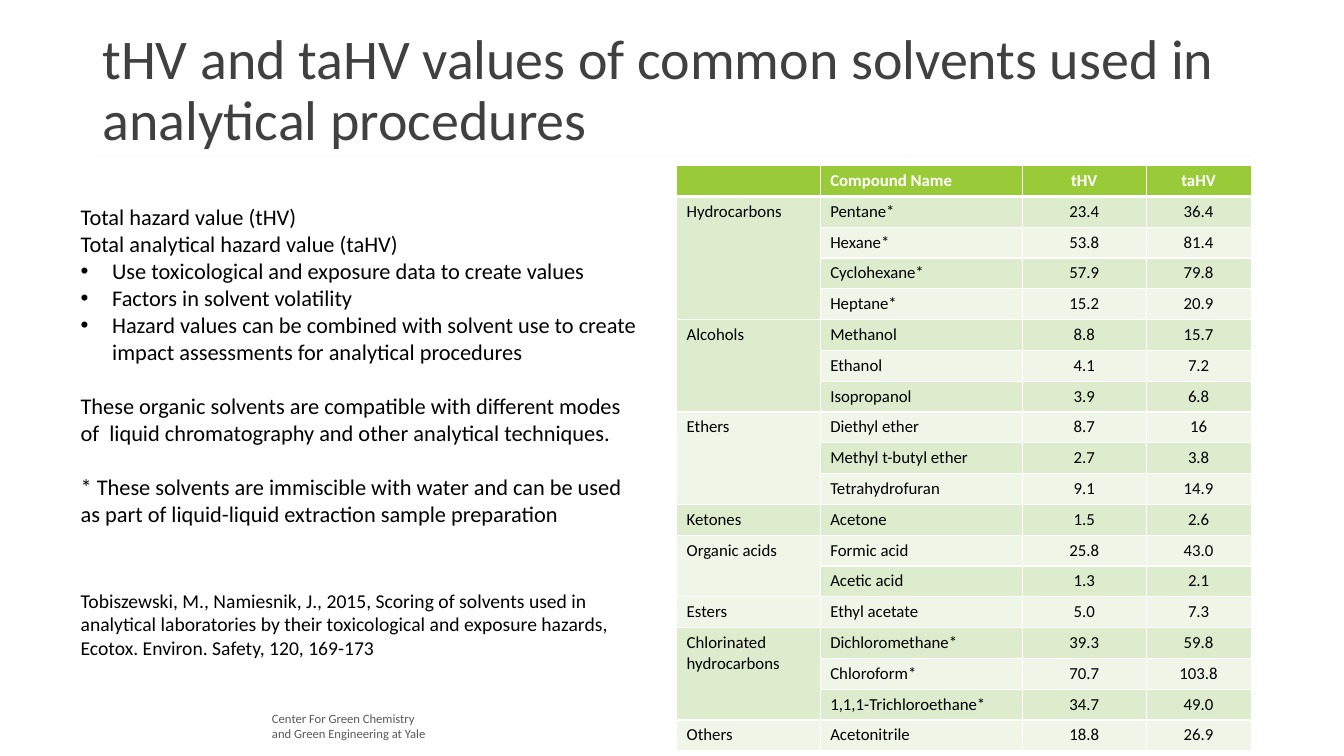
from lxml.etree import SubElement
from pptx import Presentation
from pptx.dml.color import RGBColor
from pptx.enum.shapes import MSO_CONNECTOR
from pptx.enum.text import MSO_ANCHOR, MSO_AUTO_SIZE, PP_ALIGN
from pptx.oxml.ns import qn
from pptx.util import Pt

COLORS = {
    "title": "404040", "text": "000000", "footer": "595959", "white": "FFFFFF",
    "header": "99CB38", "band": "DEECCE", "light": "EFF6E8",
    "blue": "4EB3CF", "teal": "44C1A3", "green": "37A76F",
}
TITLE = "tHV and taHV values of common solvents used in analytical procedures"
FOOTER = ["Center For Green Chemistry", "and Green Engineering at Yale"]
RULES = [("blue", 66, 703.5, 101.5), ("teal", 65, 843, 106.5), ("green", 65.5, 894, 111.5)]
BODY = [
    ("Total hazard value (tHV)", 16, 0, False),
    ("Total analytical hazard value (taHV)", 16, 0, False),
    ("Use toxicological and exposure data to create values", 16, 0, True),
    ("Factors in solvent volatility", 16, 0, True),
    ("Hazard values can be combined with solvent use to create impact assessments "
     "for analytical procedures", 16, 0, True),
    ("These organic solvents are compatible with different modes of  liquid "
     "chromatography and other analytical techniques.", 16, 19.5, False),
    ("* These solvents are immiscible with water and can be used as part of "
     "liquid-liquid extraction sample preparation", 16, 19.5, False),
    ("Tobiszewski, M., Namiesnik, J., 2015, Scoring of solvents used in analytical "
     "laboratories by their toxicological and exposure hazards, Ecotox. Environ. "
     "Safety, 120, 169-173", 14, 44, False),
]
HEADER = ["", "Compound Name", "tHV", "taHV"]
SOLVENTS = {
    "Hydrocarbons": [("Pentane*", "23.4", "36.4"), ("Hexane*", "53.8", "81.4"),
                     ("Cyclohexane*", "57.9", "79.8"), ("Heptane*", "15.2", "20.9")],
    "Alcohols": [("Methanol", "8.8", "15.7"), ("Ethanol", "4.1", "7.2"),
                 ("Isopropanol", "3.9", "6.8")],
    "Ethers": [("Diethyl ether", "8.7", "16"), ("Methyl t-butyl ether", "2.7", "3.8"),
               ("Tetrahydrofuran", "9.1", "14.9")],
    "Ketones": [("Acetone", "1.5", "2.6")],
    "Organic acids": [("Formic acid", "25.8", "43.0"), ("Acetic acid", "1.3", "2.1")],
    "Esters": [("Ethyl acetate", "5.0", "7.3")],
    "Chlorinated hydrocarbons": [("Dichloromethane*", "39.3", "59.8"),
                                 ("Chloroform*", "70.7", "103.8"),
                                 ("1,1,1-Trichloroethane*", "34.7", "49.0")],
    "Others": [("Acetonitrile", "18.8", "26.9")],
}
COLUMN_WIDTHS = [102.6, 144.3, 88.5, 75]
ROW_HEIGHT = 22


class SlideBuilder:
    """Holds the style and the current slide, and adds each kind of element."""

    def __init__(self, slide, font_name="Calibri"):
        self.slide = slide
        self.font_name = font_name

    def style(self, paragraph, size, color, bold=False):
        font = paragraph.font
        font.name, font.size, font.bold = self.font_name, Pt(size), bold
        font.color.rgb = RGBColor.from_string(COLORS[color])

    def place(self, shape, left, top, width, height):
        shape.left, shape.top = Pt(left), Pt(top)
        shape.width, shape.height = Pt(width), Pt(height)
        shape.text_frame.word_wrap = True
        shape.text_frame.auto_size = MSO_AUTO_SIZE.NONE

    def title(self, text, *box):
        shape = self.slide.shapes.title
        self.place(shape, *box)
        shape.text_frame.text = text
        shape.text_frame.vertical_anchor = MSO_ANCHOR.MIDDLE
        paragraph = shape.text_frame.paragraphs[0]
        paragraph.alignment, paragraph.line_spacing = PP_ALIGN.LEFT, 0.9
        self.style(paragraph, 40, "title")

    def body(self, items, *box):
        shape = self.slide.placeholders[1]
        self.place(shape, *box)
        shape.text_frame.text = "\n".join(item[0] for item in items)
        for paragraph, (_, size, gap, bulleted) in zip(shape.text_frame.paragraphs, items):
            paragraph.space_before, paragraph.line_spacing = Pt(gap), 1.0
            properties = paragraph._p.get_or_add_pPr()
            indent = Pt(22.5) if bulleted else 0
            properties.set("marL", str(indent))
            properties.set("indent", str(-indent))
            if bulleted:
                SubElement(properties, qn("a:buFont"), typeface="Arial")
                SubElement(properties, qn("a:buChar"), char="•")
            else:
                SubElement(properties, qn("a:buNone"))
            self.style(paragraph, size, "text")

    def text(self, lines, size, color, *box):
        shape = self.slide.shapes.add_textbox(*map(Pt, box))
        shape.text_frame.word_wrap = True
        shape.text_frame.text = "\n".join(lines)
        for paragraph in shape.text_frame.paragraphs:
            self.style(paragraph, size, color)

    def faint_rule(self, color, left, right, top):
        rule = self.slide.shapes.add_connector(
            MSO_CONNECTOR.STRAIGHT, Pt(left), Pt(top), Pt(right), Pt(top))
        rule.line.width = Pt(0.5)
        rule.line.color.rgb = RGBColor.from_string(COLORS[color])
        tint = rule.line._ln.find(".//" + qn("a:srgbClr"))
        SubElement(tint, qn("a:alpha"), val="4000")
        SubElement(rule._element.spPr, qn("a:effectLst"))

    def cell(self, cell, text, fill, color, centered, is_header):
        properties = cell._tc.get_or_add_tcPr()
        for side in "LRTB":
            width = Pt(3 if is_header and side == "B" else 1)
            border = SubElement(properties, qn(f"a:ln{side}"), w=str(width))
            solid = SubElement(border, qn("a:solidFill"))
            SubElement(solid, qn("a:srgbClr"), val=COLORS["white"])
        cell.fill.solid()
        cell.fill.fore_color.rgb = RGBColor.from_string(COLORS[fill])
        cell.text = text
        paragraph = cell.text_frame.paragraphs[0]
        paragraph.alignment = PP_ALIGN.CENTER if centered else PP_ALIGN.LEFT
        self.style(paragraph, 12, color, bold=is_header)

    def table(self, header, groups, left, top):
        rows = [header]
        spans = []
        for name, members in groups.items():
            spans.append((len(rows), len(rows) + len(members) - 1))
            rows += [("" if index else name, *member) for index, member in enumerate(members)]
        table = self.slide.shapes.add_table(
            len(rows), len(header), Pt(left), Pt(top),
            Pt(sum(COLUMN_WIDTHS)), Pt(ROW_HEIGHT * len(rows))).table
        table.horz_banding = False
        for column, width in zip(table.columns, COLUMN_WIDTHS):
            column.width = Pt(width)
        for row_index, values in enumerate(rows):
            table.rows[row_index].height = Pt(ROW_HEIGHT)
            is_header = row_index == 0
            fill = "header" if is_header else ("light", "band")[row_index % 2]
            color = "white" if is_header else "text"
            for column_index, value in enumerate(values):
                self.cell(table.cell(row_index, column_index), value, fill, color,
                          column_index > 1, is_header)
        for first, last in spans:
            if last > first:
                table.cell(first, 0).merge(table.cell(last, 0))


def main():
    presentation = Presentation()
    presentation.slide_width, presentation.slide_height = Pt(960), Pt(540)
    builder = SlideBuilder(presentation.slides.add_slide(presentation.slide_layouts[1]))
    builder.text(FOOTER, 9, "footer", 187.2, 504, 134, 29)
    for rule in RULES:
        builder.faint_rule(*rule)
    builder.title(TITLE, 66, 13.5, 828, 104.5)
    builder.table(HEADER, SOLVENTS, 483.3, 118.3)
    builder.body(BODY, 50.4, 141.8, 414.7, 378)
    presentation.save("out.pptx")


if __name__ == "__main__":
    main()
